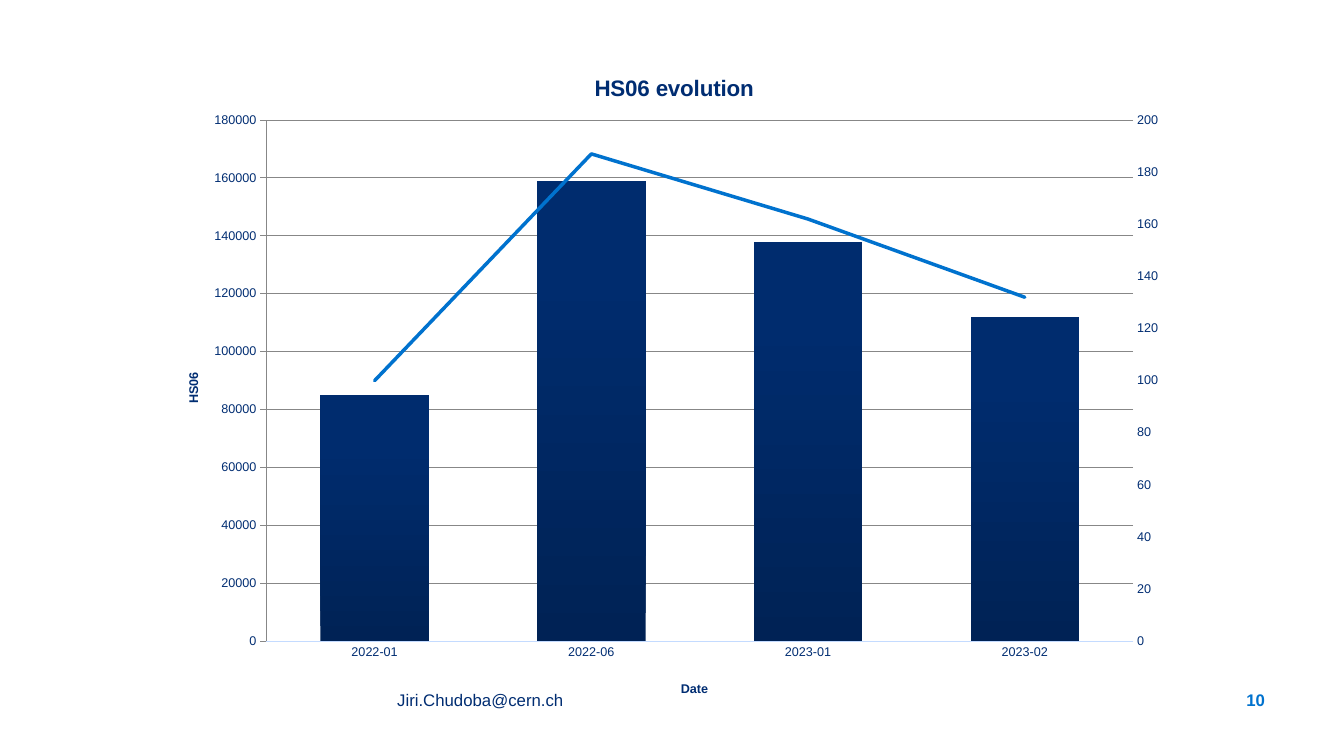
from dataclasses import dataclass

from lxml.etree import _Element
from pptx import Presentation
from pptx.chart.axis import ValueAxis
from pptx.chart.chart import Chart
from pptx.chart.data import CategoryChartData
from pptx.dml.color import RGBColor
from pptx.enum.chart import XL_CHART_TYPE, XL_MARKER_STYLE, XL_TICK_MARK
from pptx.enum.text import MSO_ANCHOR, PP_ALIGN
from pptx.oxml import parse_xml
from pptx.oxml.ns import nsdecls, qn
from pptx.slide import Slide
from pptx.text.text import TextFrame
from pptx.util import Cm, Pt

FONT = "Arial"
NAVY = "002D72"
BLUE = "0072CE"
PALE_BLUE = "C4DBFF"
BAR_STOPS = [("002255", 0), ("002C6E", 0.8)]
RIGHT_CATEGORY_ID, RIGHT_VALUE_ID = 5001, 5002


@dataclass
class FooterText:
    text: str
    left: float
    width: float
    color: str = NAVY
    bold: bool = False
    align: PP_ALIGN = PP_ALIGN.LEFT


FOOTER = [
    FooterText("Jiri.Chudoba@cern.ch", 10.01, 19.56),
    FooterText("10", 29.87, 2.01, BLUE, True, PP_ALIGN.RIGHT),
]


def rgb(color: str) -> RGBColor:
    return RGBColor.from_string(color)


def write_text(frame: TextFrame, text: str, *, size: float, color: str = NAVY,
               bold: bool = False, align: PP_ALIGN | None = None) -> None:
    paragraph = frame.paragraphs[0]
    paragraph.alignment = align
    run = paragraph.add_run()
    run.text = text
    run.font.name = FONT
    run.font.size = Pt(size)
    run.font.bold = bold
    run.font.color.rgb = rgb(color)


def add_footer(slide: Slide, item: FooterText) -> None:
    box = slide.shapes.add_textbox(Cm(item.left), Cm(16.71), Cm(item.width), Cm(1.17))
    frame = box.text_frame
    frame.word_wrap = True
    frame.vertical_anchor = MSO_ANCHOR.BOTTOM
    frame.margin_left = frame.margin_top = frame.margin_right = frame.margin_bottom = 0
    write_text(frame, item.text, size=12, color=item.color, bold=item.bold, align=item.align)


def chart_xml(tag: str, content: str) -> _Element:
    return parse_xml(f'<c:{tag} {nsdecls("c", "a")}>{content}</c:{tag}>')


def set_layout(parent: _Element, index: int, x: float, y: float,
               size: tuple[float, float] | None = None) -> None:
    """Place a chart part by fractions of the chart area."""
    for layout in parent.findall(qn("c:layout")):
        parent.remove(layout)
    target = '<c:layoutTarget val="inner"/>' if size else ""
    extent = f'<c:w val="{size[0]}"/><c:h val="{size[1]}"/>' if size else ""
    parent.insert(index, chart_xml("layout", (
        f'<c:manualLayout>{target}<c:xMode val="edge"/><c:yMode val="edge"/>'
        f'<c:x val="{x}"/><c:y val="{y}"/>{extent}</c:manualLayout>')))


def add_title(owner, text: str, size: float, x: float, y: float) -> None:
    """Title a chart or an axis."""
    title = owner.chart_title if isinstance(owner, Chart) else owner.axis_title
    write_text(title.text_frame, text, size=size, bold=True)
    set_layout(title.element, 1, x, y)


def style_value_axis(axis: ValueAxis, maximum: float, step: float) -> None:
    axis.minimum_scale = 0
    axis.maximum_scale = maximum
    axis.major_unit = step
    axis.format.line.fill.background()


def move_to_right_axis(plot_area: _Element) -> None:
    """Turn the last bar series into a line on a second value axis."""
    bar_chart = plot_area.find(qn("c:barChart"))
    series = bar_chart.findall(qn("c:ser"))[-1]
    for bar_setting in series.findall(qn("c:invertIfNegative")):
        series.remove(bar_setting)
    line_chart = chart_xml("lineChart", (
        '<c:grouping val="standard"/><c:varyColors val="0"/><c:marker val="1"/>'
        f'<c:axId val="{RIGHT_CATEGORY_ID}"/><c:axId val="{RIGHT_VALUE_ID}"/>'))
    line_chart.insert(2, series)
    bar_chart.addnext(line_chart)

    def axis(tag: str, own: int, other: int, hidden: int, side: str, crosses: str) -> _Element:
        return chart_xml(tag, (
            f'<c:axId val="{own}"/><c:scaling><c:orientation val="minMax"/></c:scaling>'
            f'<c:delete val="{hidden}"/><c:axPos val="{side}"/>'
            '<c:numFmt formatCode="General" sourceLinked="0"/><c:majorTickMark val="out"/>'
            '<c:minorTickMark val="none"/><c:tickLblPos val="nextTo"/>'
            f'<c:crossAx val="{other}"/><c:crosses val="{crosses}"/>'))

    last_axis = plot_area.findall(qn("c:valAx"))[-1]
    right_axis = axis("valAx", RIGHT_VALUE_ID, RIGHT_CATEGORY_ID, 0, "r", "max")
    last_axis.addnext(right_axis)
    right_axis.addnext(axis("catAx", RIGHT_CATEGORY_ID, RIGHT_VALUE_ID, 1, "b", "autoZero"))


def add_evolution_chart(slide: Slide) -> None:
    data = CategoryChartData()
    data.categories = ["2022-01", "2022-06", "2023-01", "2023-02"]
    data.add_series("Series 1", [85000, 159000, 138000, 112000])
    data.add_series("Series 2", [100, 187, 162, 132])
    chart = slide.shapes.add_chart(XL_CHART_TYPE.COLUMN_CLUSTERED, Cm(4.04), Cm(1.09),
                                   Cm(25.81), Cm(16.84), data).chart
    chart.has_legend = False
    chart.font.name = FONT
    chart.font.size = Pt(9)
    chart.font.color.rgb = rgb(NAVY)
    chart.element.find(qn("c:chart")).addnext(
        chart_xml("spPr", "<a:noFill/><a:ln><a:noFill/></a:ln>"))

    plot_area = chart.element.find(f'{qn("c:chart")}/{qn("c:plotArea")}')
    move_to_right_axis(plot_area)
    set_layout(plot_area, 0, 0.1035, 0.115, (0.8465, 0.78))

    category_axis, value_axis = chart.category_axis, chart.value_axis
    add_title(chart, "HS06 evolution", 16, 0.42, 0.04)
    add_title(category_axis, "Date", 9, 0.506, 0.95)
    add_title(value_axis, "HS06", 9, 0.022, 0.489)
    for axis in (category_axis, value_axis):
        axis.major_tick_mark = axis.minor_tick_mark = XL_TICK_MARK.NONE
    value_axis.tick_labels.number_format = "0"
    value_axis.tick_labels.number_format_is_linked = False
    value_axis.has_major_gridlines = True
    for line in (category_axis.format.line, value_axis.major_gridlines.format.line):
        line.color.rgb = rgb(PALE_BLUE)
        line.width = Pt(0.75)
    style_value_axis(value_axis, 180000, 20000)
    style_value_axis(ValueAxis(plot_area.findall(qn("c:valAx"))[-1]), 200, 20)

    bar_plot, line_plot = chart.plots
    bar_plot.gap_width = 100
    bar_plot.vary_by_categories = False
    bar_fill = bar_plot.series[0].format.fill
    bar_fill.gradient()
    bar_fill.gradient_angle = 90
    for stop, (color, position) in zip(bar_fill.gradient_stops, BAR_STOPS):
        stop.color.rgb = rgb(color)
        stop.position = position

    trend = line_plot.series[0]
    trend.smooth = False
    trend.marker.style = XL_MARKER_STYLE.NONE
    trend.format.line.color.rgb = rgb(BLUE)
    trend.format.line.width = Pt(2.5)
    for outline in plot_area.find(qn("c:lineChart")).iter(qn("a:ln")):
        outline.set("cap", "rnd")


def main() -> None:
    presentation = Presentation()
    presentation.slide_width = Cm(33.87)
    presentation.slide_height = Cm(19.05)
    slide = presentation.slides.add_slide(presentation.slide_layouts[6])
    for item in FOOTER:
        add_footer(slide, item)
    add_evolution_chart(slide)
    presentation.save("out.pptx")


if __name__ == "__main__":
    main()
